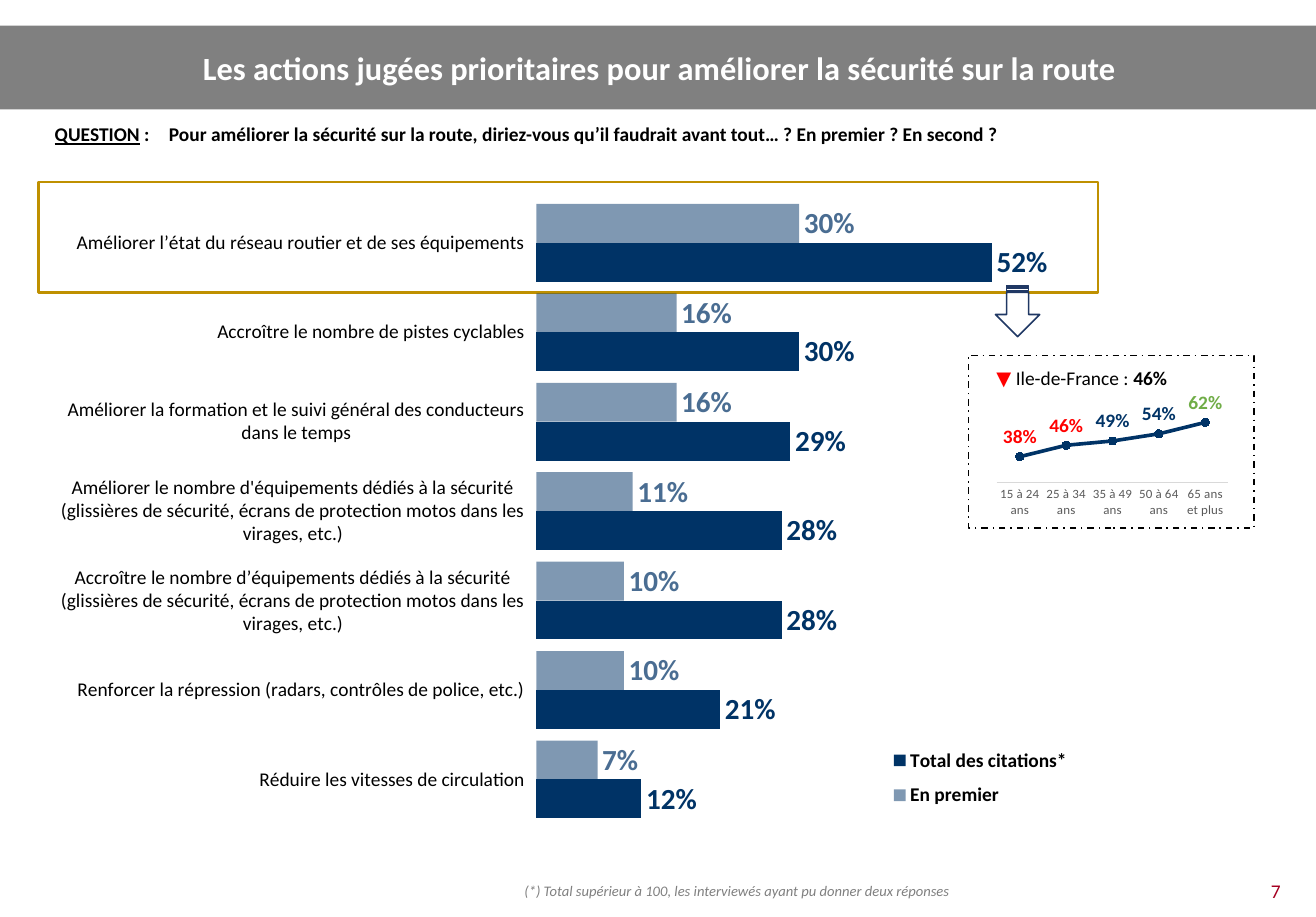
from dataclasses import dataclass

from lxml import etree
from pptx import Presentation
from pptx import util as u
from pptx.chart import data as chart_data
from pptx.dml.color import RGBColor
from pptx.enum import chart as ch
from pptx.enum import dml, shapes, text
from pptx.oxml import ns

COLORS = {
    "navy": "003366", "slate": "4A6D92", "arrow": "203864", "gold": "BF9000",
    "gray": "808080", "axis": "595959", "rule": "D9D9D9", "red": "FF0000",
    "green": "70AD47", "wine": "A50021", "black": "000000", "white": "FFFFFF",
}
FONT = "Calibri"


@dataclass
class Span:
    text: str
    size: float = 12
    color: str = "black"
    bold: bool = False
    italic: bool = False
    underline: bool = False


@dataclass
class Panel:
    kind: shapes.MSO_SHAPE
    area: tuple
    fill: str
    line: str | None = None
    weight: float = 1
    dash: dml.MSO_LINE | None = None
    rotation: float = 0


@dataclass
class Note:
    area: tuple
    spans: list
    align: text.PP_ALIGN = text.PP_ALIGN.LEFT


@dataclass
class Measure:
    name: str
    values: list
    label_color: str
    opacity: int


def rgb(name: str) -> RGBColor:
    return RGBColor.from_string(COLORS[name])


def inches(area: tuple) -> list:
    return [u.Inches(length) for length in area]


def style(font, size: float, color: str, bold: bool = False) -> None:
    font.name, font.size, font.bold = FONT, u.Pt(size), bold
    font.color.rgb = rgb(color)


def add_spans(para, spans: list) -> None:
    for item in spans:
        span = para.add_run()
        span.text = item.text
        style(span.font, item.size, item.color, item.bold)
        span.font.italic, span.font.underline = item.italic, item.underline


def add_panel(page, panel: Panel):
    box = page.shapes.add_shape(panel.kind, *inches(panel.area))
    box.shadow.inherit = False
    box.rotation = panel.rotation
    box.fill.solid()
    box.fill.fore_color.rgb = rgb(panel.fill)
    if panel.line:
        box.line.color.rgb = rgb(panel.line)
        box.line.width = u.Pt(panel.weight)
        if panel.dash:
            box.line.dash_style = panel.dash
    else:
        box.line.fill.background()
    return box


def add_note(page, note: Note):
    box = page.shapes.add_textbox(*inches(note.area))
    box.text_frame.word_wrap = True
    para = box.text_frame.paragraphs[0]
    para.alignment = note.align
    add_spans(para, note.spans)
    return box


def set_layout(parent, area: tuple, inner: bool = False) -> None:
    """Give a plot area or legend a fixed place, in fractions of its chart."""
    for old in parent.findall(ns.qn("c:layout")):
        parent.remove(old)
    after_position = len(parent) and parent[0].tag == ns.qn("c:legendPos")
    layout = etree.Element(ns.qn("c:layout"))
    manual = etree.SubElement(layout, ns.qn("c:manualLayout"))
    settings = [("layoutTarget", "inner")] if inner else []
    settings += [("xMode", "edge"), ("yMode", "edge"), *zip("xywh", area)]
    for tag, value in settings:
        etree.SubElement(manual, ns.qn(f"c:{tag}")).set("val", str(value))
    parent.insert(1 if after_position else 0, layout)


def add_chart(page, kind, area: tuple, plot: tuple, categories: list,
              measures: list, low: float, high: float, size: float):
    data = chart_data.CategoryChartData(number_format="0%")
    data.categories = categories
    for measure in measures:
        data.add_series(measure.name, measure.values)
    chart = page.shapes.add_chart(kind, *inches(area), data).chart
    chart.has_title = chart.has_legend = False
    style(chart.font, size, "black")
    chart.plots[0].vary_by_categories = False
    axis = chart.value_axis
    axis.visible = axis.has_major_gridlines = False
    axis.minimum_scale, axis.maximum_scale = low, high
    set_layout(chart._chartSpace.chart.plotArea, plot, inner=True)
    return chart


def label_series(series, size: float, color: str, position) -> None:
    labels = series.data_labels
    labels.show_value = True
    labels.number_format, labels.number_format_is_linked = "0%", False
    labels.position = position
    style(labels.font, size, color, True)


def add_actions_chart(page) -> None:
    equipment = ("nombre d{}équipements dédiés à la sécurité (glissières de sécurité, "
                 "écrans de protection motos dans les virages, etc.)")
    actions = [
        "Améliorer l’état du réseau routier et de ses équipements",
        "Accroître le nombre de pistes cyclables",
        "Améliorer la formation et le suivi général des conducteurs dans le temps",
        "Améliorer le " + equipment.format("'"),
        "Accroître le " + equipment.format("’"),
        "Renforcer la répression (radars, contrôles de police, etc.)",
        "Réduire les vitesses de circulation",
    ]
    measures = [
        Measure("En premier", [0.3, 0.16, 0.16, 0.11, 0.1, 0.1, 0.07], "slate", 50),
        Measure("Total des citations*", [0.52, 0.3, 0.29, 0.28, 0.28, 0.21, 0.12],
                "navy", 100),
    ]
    chart = add_chart(page, ch.XL_CHART_TYPE.BAR_CLUSTERED, (0.38, 1.7, 9.34, 5.38),
                      (0.452, 0, 0.483, 0.999), actions, measures, 0, 0.6, 18)
    chart.plots[0].gap_width = 30
    chart.category_axis.reverse_order = True
    chart.category_axis.format.line.fill.background()
    style(chart.category_axis.tick_labels.font, 12, "black")
    for series, measure in zip(chart.plots[0].series, measures):
        fill = series.format.fill
        fill.solid()
        fill.fore_color.rgb = rgb("navy")
        if measure.opacity < 100:
            color = series._element.spPr.find(".//" + ns.qn("a:srgbClr"))
            alpha = etree.SubElement(color, ns.qn("a:alpha"))
            alpha.set("val", str(measure.opacity * 1000))
        label_series(series, 18, measure.label_color, ch.XL_LABEL_POSITION.OUTSIDE_END)
    chart.has_legend = True
    chart.legend.position = ch.XL_LEGEND_POSITION.RIGHT
    chart.legend.include_in_layout = False
    style(chart.legend.font, 12, "black", True)
    set_layout(chart.legend._element, (0.75, 0.86, 0.22, 0.13))


def add_age_chart(page) -> None:
    ages = ["15 à 24 ans", "25 à 34 ans", "35 à 49 ans", "50 à 64 ans", "65 ans et plus"]
    measure = Measure("Total des citations", [0.38, 0.46, 0.49, 0.54, 0.62], "navy", 100)
    chart = add_chart(page, ch.XL_CHART_TYPE.LINE_MARKERS, (8.44, 3.36, 2.21, 1.26),
                      (0.05, 0.141, 0.9, 0.469), ages, [measure], 0.2, 0.67, 10)
    axis = chart.category_axis
    axis.major_tick_mark = ch.XL_TICK_MARK.NONE
    axis.format.line.color.rgb = rgb("rule")
    axis.format.line.width = u.Pt(0.75)
    style(axis.tick_labels.font, 8, "axis")
    series = chart.plots[0].series[0]
    series.smooth = False
    series.format.line.color.rgb = rgb("navy")
    series.format.line.width = u.Pt(2.25)
    marker = series.marker
    marker.style, marker.size = ch.XL_MARKER_STYLE.CIRCLE, 5
    marker.format.fill.solid()
    marker.format.fill.fore_color.rgb = rgb("navy")
    marker.format.line.color.rgb = rgb("navy")
    label_series(series, 12, "navy", ch.XL_LABEL_POSITION.ABOVE)
    for index, color in {0: "red", 1: "red", 4: "green"}.items():
        label = series.points[index].data_label
        style(label.font, 12, color, True)
        label.position = ch.XL_LABEL_POSITION.ABOVE


def add_title(page) -> None:
    band = add_panel(page, Panel(shapes.MSO_SHAPE.RECTANGLE, (0, 0.22, 11.29, 0.72), "gray"))
    title = page.shapes.title
    title._element.addprevious(band._element)
    title.left, title.top, title.width, title.height = inches((1.64, 0.22, 9.48, 0.72))
    title.text_frame.vertical_anchor = text.MSO_ANCHOR.MIDDLE
    para = title.text_frame.paragraphs[0]
    para.alignment = text.PP_ALIGN.LEFT
    add_spans(para, [Span("Les actions jugées prioritaires pour améliorer la sécurité "
                          "sur la route", 20, "white", True)])


def add_question(page) -> None:
    box = add_note(page, Note((0.38, 1.01, 10.67, 0.28), [
        Span("QUESTION", bold=True, underline=True),
        Span(" :\tPour améliorer la sécurité sur la route, diriez-vous qu’il faudrait "
             "avant tout… ? En premier ? En second ?", bold=True),
    ], text.PP_ALIGN.JUSTIFY))
    frame = box.text_frame
    frame.margin_left, frame.margin_top, frame.margin_right, frame.margin_bottom = inches(
        (0.09, 0.04, 0.36, 0.04))
    hanging = frame.paragraphs[0]._p.get_or_add_pPr()
    hanging.set("marL", str(u.Inches(0.98)))
    hanging.set("indent", str(u.Inches(-0.98)))


def main() -> None:
    deck = Presentation()
    deck.slide_width, deck.slide_height = inches((11.29, 7.87))
    page = deck.slides.add_slide(deck.slide_layouts[5])
    # Heading
    add_title(page)
    add_question(page)
    # Frames behind the charts
    add_panel(page, Panel(shapes.MSO_SHAPE.RECTANGLE, (8.31, 3.05, 2.45, 1.48), "white",
                          "black", 1, dml.MSO_LINE.DASH_DOT))
    add_panel(page, Panel(shapes.MSO_SHAPE.RECTANGLE, (0.33, 1.56, 9.09, 0.95), "white",
                          "gold", 1.5))
    # Charts
    add_actions_chart(page)
    add_age_chart(page)
    # Regional result, footnote and page number
    for note in (
        Note((8.45, 3.09, 2.45, 0.3), [Span("▼ ", color="red"), Span("Ile-de-France : "),
                                       Span("46%", bold=True)]),
        Note((4.4, 7.52, 4.51, 0.25), [Span("(*) Total supérieur à 100, les interviewés ayant "
                                            "pu donner deux réponses", 9, "gray", italic=True)]),
        Note((10.65, 7.5, 0.59, 0.3), [Span("7", color="wine")], text.PP_ALIGN.CENTER),
    ):
        add_note(page, note)
    # Arrow from the first action to its details
    add_panel(page, Panel(shapes.MSO_SHAPE.STRIPED_RIGHT_ARROW, (8.51, 2.48, 0.44, 0.38),
                          "white", "arrow", rotation=90))
    deck.save("out.pptx")


if __name__ == "__main__":
    main()
